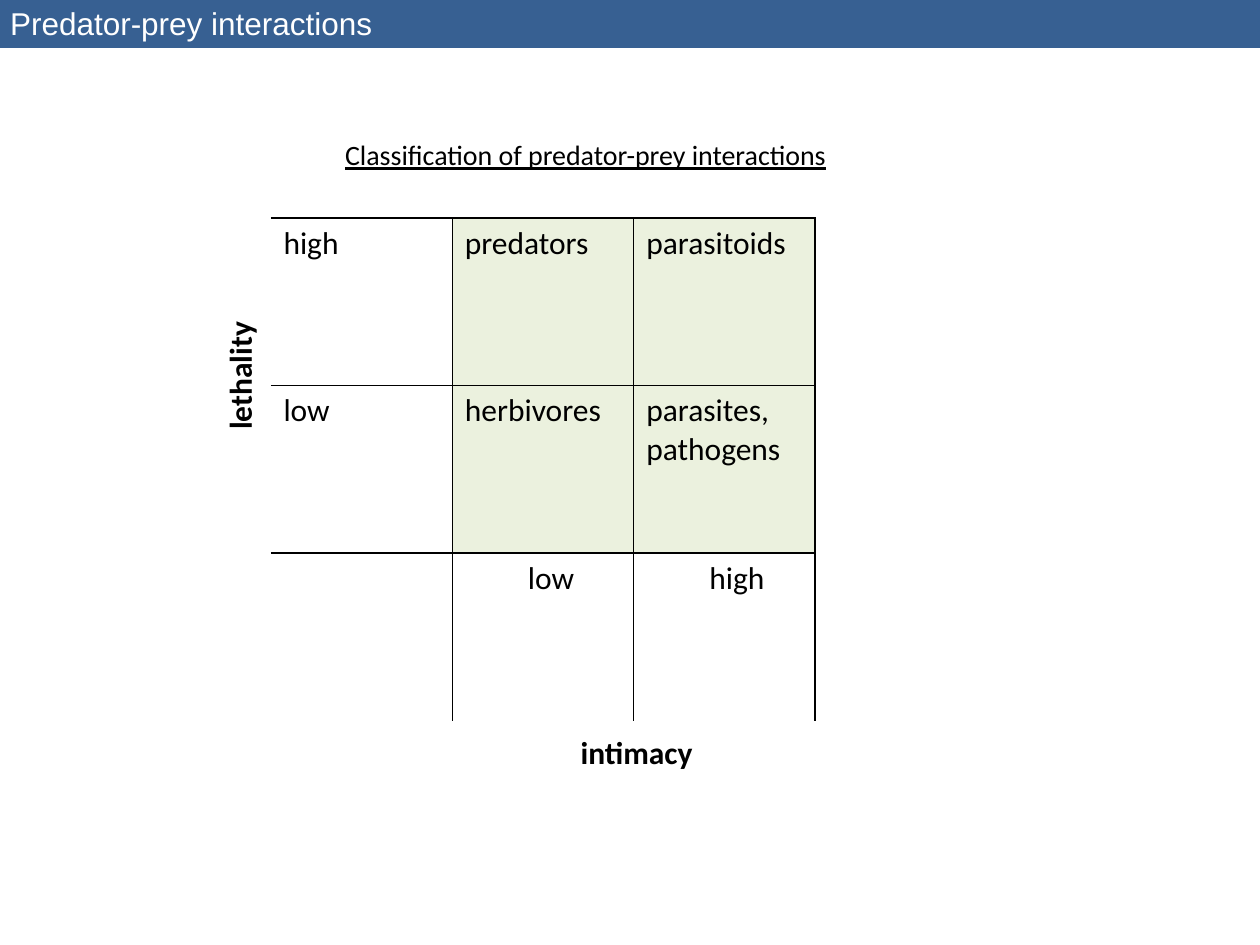
from pptx import Presentation
from pptx.dml.color import RGBColor
from pptx.enum.text import MSO_ANCHOR, MSO_AUTO_SIZE, PP_ALIGN
from pptx.oxml.xmlchemy import OxmlElement
from pptx.util import Inches, Pt

COLORS = {"bar": "376092", "class": "EBF1DE", "white": "FFFFFF", "black": "000000"}
CELL_WIDTH, CELL_HEIGHT = 1.44, 1.33
GRID = [
    ["high", "predators", "parasitoids"],
    ["low", "herbivores", "parasites,\npathogens"],
    ["", "low", "high"],
]


def paint(fill, color):
    fill.solid()
    fill.fore_color.rgb = RGBColor.from_string(COLORS[color])


def style_text(frame, size=18, font="Calibri", color="black", bold=False, underline=False):
    for para in frame.paragraphs:
        for span in para.runs:
            span.font.size = Pt(size)
            span.font.name = font
            span.font.bold = bold
            span.font.underline = underline
            span.font.color.rgb = RGBColor.from_string(COLORS[color])


def add_title(page, text):
    title = page.shapes.title
    title.left, title.top = Inches(-0.02), Inches(-0.02)
    title.width, title.height = Inches(10.02), Inches(0.4)
    paint(title.fill, "bar")
    frame = title.text_frame
    frame.text = text
    frame.auto_size = MSO_AUTO_SIZE.NONE
    frame.vertical_anchor = MSO_ANCHOR.TOP
    frame.paragraphs[0].alignment = PP_ALIGN.LEFT
    style_text(frame, font="Arial", color="white")


def add_label(page, text, left, top, width, height=0.4, rotation=0, **style):
    box = page.shapes.add_textbox(Inches(left), Inches(top), Inches(width), Inches(height))
    box.rotation = rotation
    frame = box.text_frame
    frame.word_wrap = False
    frame.text = text
    style_text(frame, **style)


def set_borders(cell, visible):
    """Draw the sides named in visible (from L, R, T, B) and hide the others."""
    props = cell._tc.get_or_add_tcPr()
    for side in "LRTB":
        line = OxmlElement(f"a:ln{side}")
        if side in visible:
            line.set("w", str(Pt(1)))
            fill = OxmlElement("a:solidFill")
            color = OxmlElement("a:srgbClr")
            color.set("val", COLORS["black"])
            fill.append(color)
        else:
            fill = OxmlElement("a:noFill")
        line.append(fill)
        props.append(line)


def add_class_table(page, left, top):
    count = len(GRID)
    table = page.shapes.add_table(
        count, count, Inches(left), Inches(top),
        Inches(count * CELL_WIDTH), Inches(count * CELL_HEIGHT),
    ).table
    table.first_row = table.horz_banding = False
    for column in table.columns:
        column.width = Inches(CELL_WIDTH)
    for row_index, texts in enumerate(GRID):
        table.rows[row_index].height = Inches(CELL_HEIGHT)
        is_axis_row = row_index == count - 1
        for column_index, text in enumerate(texts):
            is_axis_column = column_index == 0
            cell = table.cell(row_index, column_index)
            cell.text = text
            style_text(cell.text_frame)
            # The outer edges of the axis cells stay open.
            sides = "RT" + ("" if is_axis_column else "L") + ("" if is_axis_row else "B")
            set_borders(cell, sides)
            paint(cell.fill, "white" if is_axis_row or is_axis_column else "class")
            if is_axis_row and text:
                para = cell.text_frame.paragraphs[0]
                para.level = 1
                para._p.get_or_add_pPr().set("marL", str(Inches(0.5)))


def main():
    deck = Presentation()
    deck.slide_width, deck.slide_height = Inches(10), Inches(7.5)
    page = deck.slides.add_slide(deck.slide_layouts[5])
    add_title(page, "Predator-prey interactions")
    add_class_table(page, 2.15, 1.73)
    add_label(page, "intimacy", 4.51, 5.77, 1.1, bold=True)
    add_label(page, "lethality", 1.37, 2.78, 1.06, rotation=270, bold=True)
    add_label(page, "Classification of predator-prey interactions",
              2.64, 1.04, 4.08, 0.37, size=16, underline=True)
    deck.save("out.pptx")


if __name__ == "__main__":
    main()
